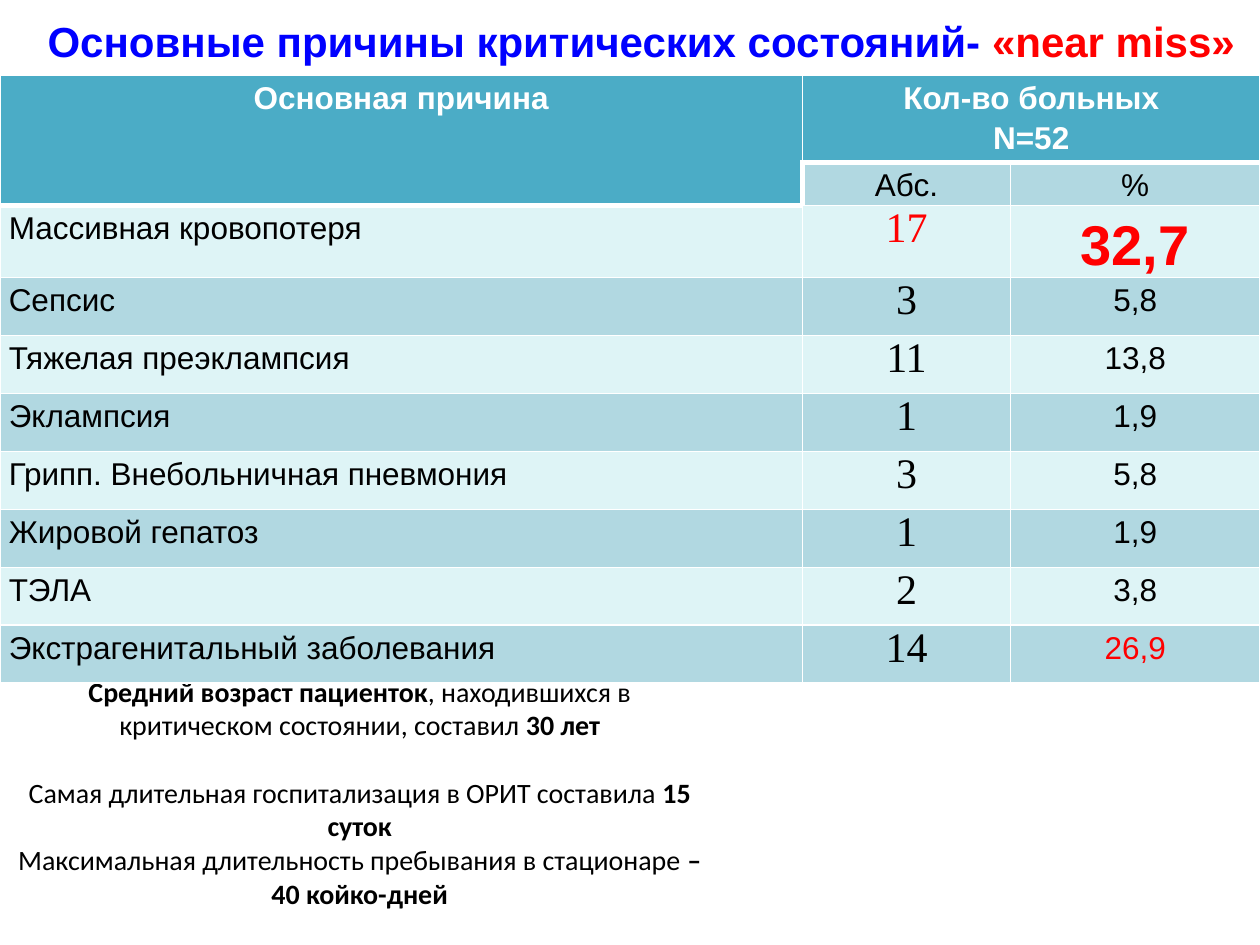
from dataclasses import dataclass
from typing import NamedTuple

from lxml.etree import SubElement
from pptx import Presentation
from pptx.dml.color import RGBColor
from pptx.enum.text import MSO_ANCHOR as Anchor, PP_ALIGN as Align
from pptx.oxml.ns import qn
from pptx.util import Inches, Pt


@dataclass(frozen=True)
class Theme:
    header: str = "4BACC6"
    dark_band: str = "B1D8E1"
    light_band: str = "DEF4F6"
    white: str = "FFFFFF"
    black: str = "000000"
    blue: str = "0000FF"
    red: str = "FF0000"
    sans: str = "Arial"
    serif: str = "Times New Roman"
    notes: str = "Calibri"
    note_size: int = 16
    table_size: int = 18
    large_size: int = 24
    accent_size: int = 32
    thin: int = 1
    thick: int = 3


THEME = Theme()


class Style(NamedTuple):
    font: str = THEME.sans
    size: int = THEME.table_size
    color: str = THEME.black
    bold: bool = False
    align: Align = Align.CENTER
    line_spacing: float = 1.15


class Cause(NamedTuple):
    name: str
    count: str
    percent: str
    count_color: str = THEME.black
    percent_style: Style = Style()


class Run(NamedTuple):
    text: str
    bold: bool = False


class Note(NamedTuple):
    runs: list[Run]
    space_before: float = 0


CAUSES = [
    Cause("Массивная кровопотеря", "17", "32,7", THEME.red,
          Style(size=THEME.accent_size, color=THEME.red, bold=True)),
    Cause("Сепсис", "3", "5,8"),
    Cause("Тяжелая преэклампсия", "11", "13,8"),
    Cause("Эклампсия", "1", "1,9"),
    Cause("Грипп. Внебольничная пневмония", "3", "5,8"),
    Cause("Жировой гепатоз", "1", "1,9"),
    Cause("ТЭЛА", "2", "3,8"),
    Cause("Экстрагенитальный заболевания", "14", "26,9",
          percent_style=Style(color=THEME.red)),
]
NOTES = [
    Note([Run("Средний возраст пациенток", True),
          Run(", находившихся в критическом состоянии, составил "),
          Run("30 лет", True)]),
    Note([Run("Самая длительная госпитализация в ОРИТ составила "),
          Run("15 суток", True)], space_before=19.5),
    Note([Run("Максимальная длительность пребывания в стационаре"),
          Run(" – 40 койко-дней", True)]),
]
COLUMN_WIDTHS = [6.37, 1.65, 1.98]
ROW_HEIGHTS = [0.69, 0.34] + [0.46] * len(CAUSES)
HEADER_STYLE = Style(color=THEME.white, bold=True)
NAME_STYLE = Style(align=Align.LEFT)


def place(shape, left: float, top: float, width: float, height: float) -> None:
    shape.left, shape.top = Inches(left), Inches(top)
    shape.width, shape.height = Inches(width), Inches(height)


def set_borders(cell, row: int, column: int) -> None:
    """White grid, with a thicker rule around the header."""
    thick_sides = {
        "L": row == 1 and column == 1,
        "R": False,
        "T": (row == 1 and column > 0) or (row == 2 and column == 0),
        "B": row == 0 or (row == 1 and column == 0),
    }
    properties = cell._tc.get_or_add_tcPr()
    for side, is_thick in thick_sides.items():
        width = Pt(THEME.thick if is_thick else THEME.thin)
        line = SubElement(properties, qn(f"a:ln{side}"), w=str(width))
        fill = SubElement(line, qn("a:solidFill"))
        SubElement(fill, qn("a:srgbClr"), val=THEME.white)


def write_cell(cell, text: str, style: Style) -> None:
    cell.text = text
    for paragraph in cell.text_frame.paragraphs:
        paragraph.alignment = style.align
        paragraph.line_spacing = style.line_spacing
        font = paragraph.font
        font.name, font.size, font.bold = style.font, Pt(style.size), style.bold
        font.color.rgb = RGBColor.from_string(style.color)


def format_cell(cell, row: int, column: int) -> None:
    cell.margin_left = cell.margin_right = Inches(0.07)
    cell.margin_top = cell.margin_bottom = 0
    set_borders(cell, row, column)
    in_header = row == 0 or (row == 1 and column == 0)
    band = THEME.dark_band if row % 2 else THEME.light_band
    cell.fill.solid()
    cell.fill.fore_color.rgb = RGBColor.from_string(THEME.header if in_header else band)


def add_causes_table(slide) -> None:
    frame = slide.shapes.add_table(
        len(ROW_HEIGHTS), len(COLUMN_WIDTHS), 0, Inches(0.6),
        Inches(sum(COLUMN_WIDTHS)), Inches(sum(ROW_HEIGHTS)))
    table = frame.table
    for column, width in zip(table.columns, COLUMN_WIDTHS):
        column.width = Inches(width)
    for row, height in zip(table.rows, ROW_HEIGHTS):
        row.height = Inches(height)
    for row in range(len(ROW_HEIGHTS)):
        for column in range(len(COLUMN_WIDTHS)):
            format_cell(table.cell(row, column), row, column)

    # Two-level header
    table.cell(0, 0).merge(table.cell(1, 0))
    table.cell(0, 1).merge(table.cell(0, 2))
    write_cell(table.cell(0, 0), "Основная причина", HEADER_STYLE)
    write_cell(table.cell(0, 1), "Кол-во больных\nN=52", HEADER_STYLE)
    write_cell(table.cell(1, 1), "Абс.", Style())
    write_cell(table.cell(1, 2), "%", Style())

    # One row per cause
    for row, cause in enumerate(CAUSES, start=2):
        count_style = Style(THEME.serif, THEME.large_size, cause.count_color,
                            line_spacing=1.0)
        write_cell(table.cell(row, 0), cause.name, NAME_STYLE)
        write_cell(table.cell(row, 1), cause.count, count_style)
        write_cell(table.cell(row, 2), cause.percent, cause.percent_style)


def fill_title(title) -> None:
    place(title, 0.27, 0.07, 9.73, 0.5)
    title.text_frame.vertical_anchor = Anchor.MIDDLE
    paragraph = title.text_frame.paragraphs[0]
    paragraph.alignment = Align.CENTER
    font = paragraph.font
    font.name, font.size, font.bold = THEME.sans, Pt(THEME.large_size), True
    for text, color in [("Основные причины критических состояний- ", THEME.blue),
                        ("«near miss» ", THEME.red)]:
        run = paragraph.add_run()
        run.text = text
        run.font.color.rgb = RGBColor.from_string(color)


def fill_notes(body) -> None:
    place(body, 0, 5.3, 5.71, 1.99)
    frame = body.text_frame
    frame.vertical_anchor = Anchor.TOP
    for index, note in enumerate(NOTES):
        paragraph = frame.add_paragraph() if index else frame.paragraphs[0]
        paragraph.alignment = Align.CENTER
        paragraph.space_before = Pt(note.space_before)
        properties = paragraph._p.get_or_add_pPr()
        properties.set("marL", "0")
        properties.set("indent", "0")
        SubElement(properties, qn("a:buNone"))
        font = paragraph.font
        font.name, font.size = THEME.notes, Pt(THEME.note_size)
        font.color.rgb = RGBColor.from_string(THEME.black)
        for text, bold in note.runs:
            run = paragraph.add_run()
            run.text, run.font.bold = text, bold


def main() -> None:
    presentation = Presentation()
    presentation.slide_width, presentation.slide_height = Inches(10), Inches(7.5)
    slide = presentation.slides.add_slide(presentation.slide_layouts[1])
    fill_title(slide.shapes.title)
    fill_notes(slide.placeholders[1])
    add_causes_table(slide)
    presentation.save("out.pptx")


if __name__ == "__main__":
    main()
